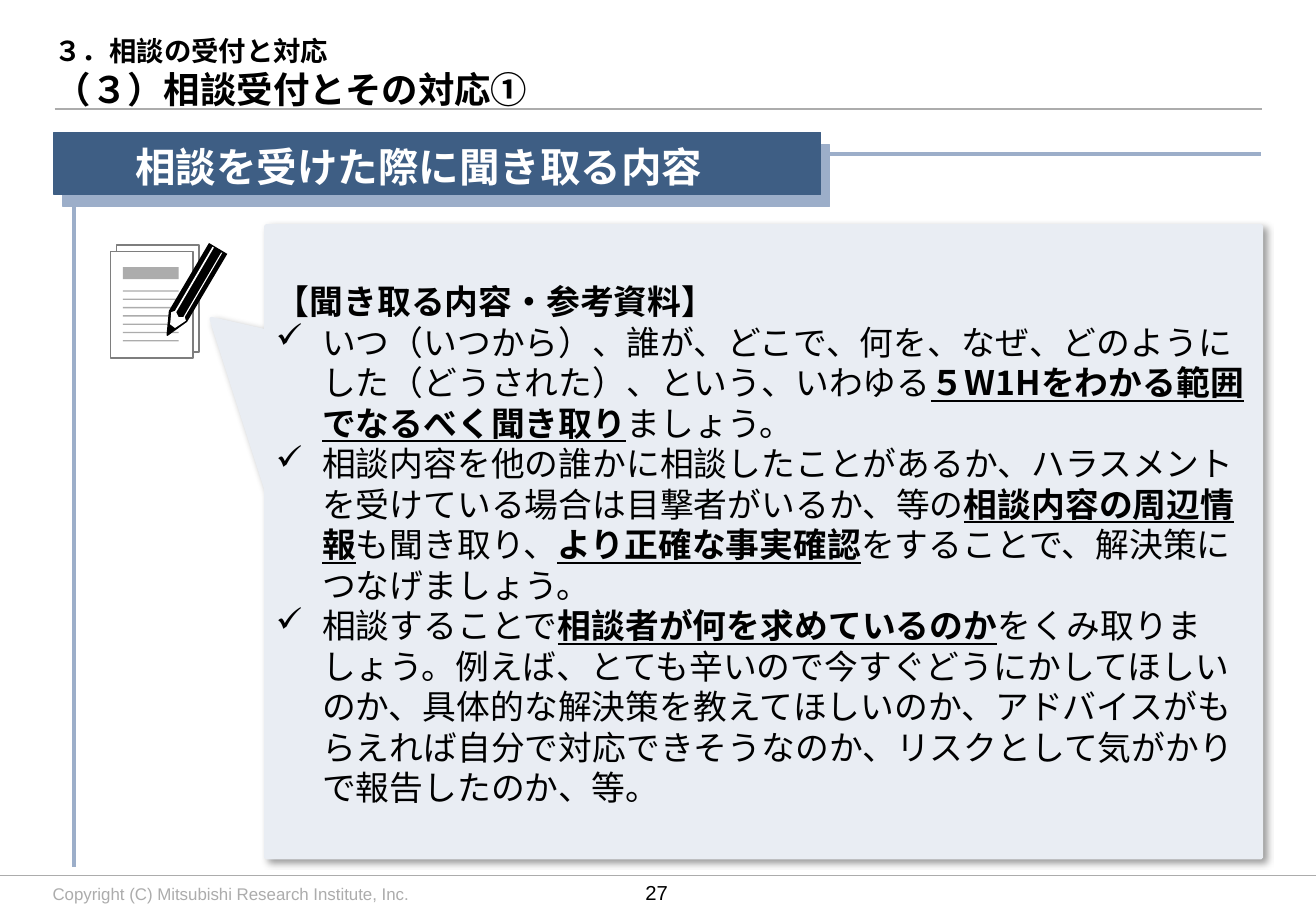
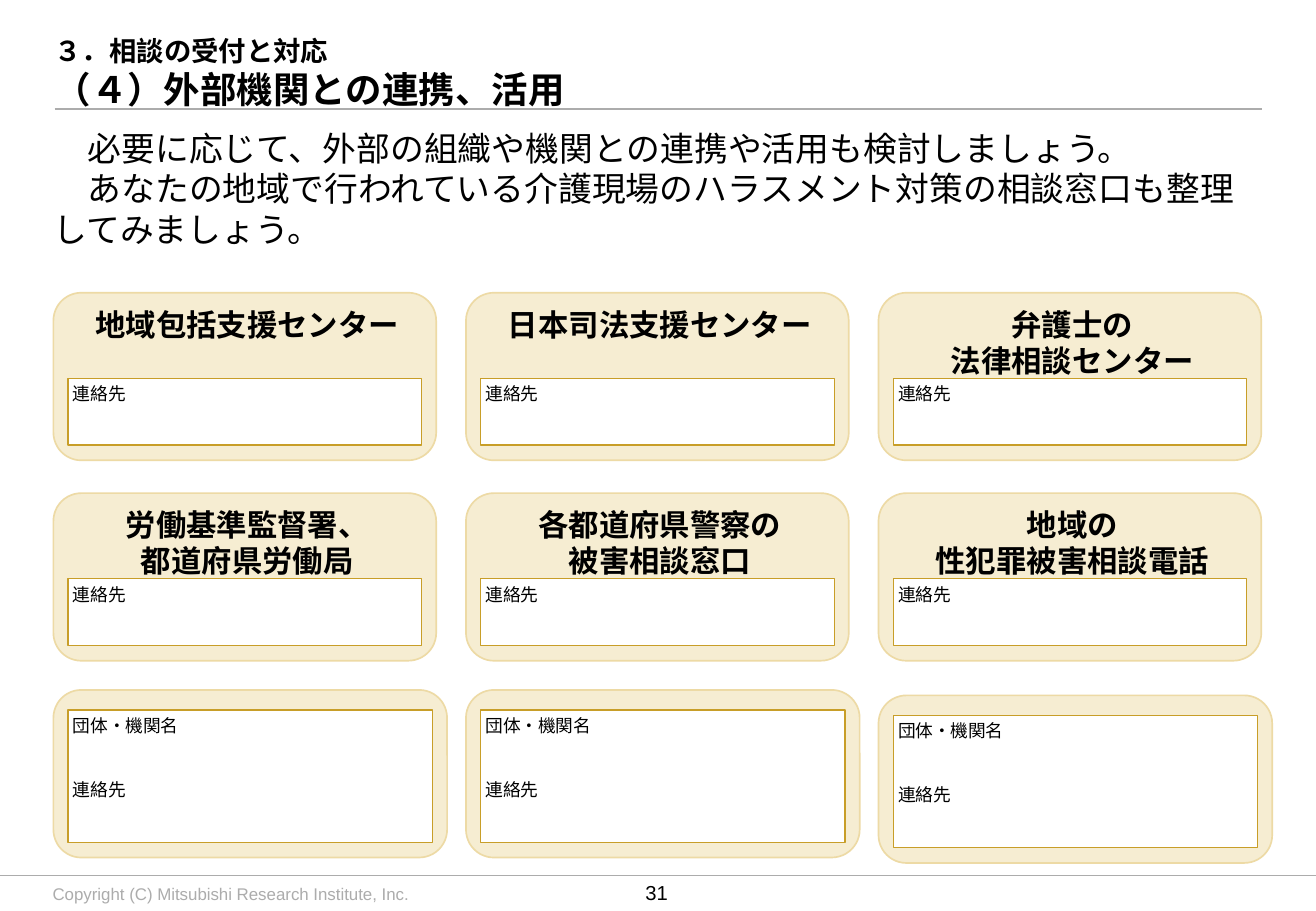
"""Build two slides on handling consultations and working with outside bodies."""
import dataclasses
import typing

import lxml.etree
import pptx
import pptx.dml.color
import pptx.enum.shapes
import pptx.enum.text
import pptx.oxml.ns
import pptx.util

SHAPES = pptx.enum.shapes.MSO_SHAPE
ALIGN = pptx.enum.text.PP_ALIGN
ANCHOR = pptx.enum.text.MSO_ANCHOR
SLIDE_WIDTH = pptx.util.Inches(10.83)
SLIDE_HEIGHT = pptx.util.Inches(7.5)


@dataclasses.dataclass(frozen=True)
class Theme:
    """Colours, fonts and type sizes of the deck."""
    ink: str = "000000"
    paper: str = "FFFFFF"
    grey: str = "ACACAC"
    sheet_edge: str = "7E7E7E"
    navy: str = "3E5E84"
    steel: str = "9CAEC9"
    mist: str = "E9EDF3"
    cream: str = "F6EDD2"
    cream_edge: str = "EDDAA5"
    gold: str = "C89E28"
    japanese: str = "Noto Sans CJK JP"
    latin: str = "Arial"
    banner: float = 24
    title: float = 21.6
    body: float = 20
    card: float = 18
    chapter: float = 16.2
    page: float = 12
    field: float = 10.5
    copyright: float = 10
    leading: float = 1.2


THEME = Theme()


class Box(typing.NamedTuple):
    """A frame in percent of the slide's width and height."""
    left: float
    top: float
    width: float
    height: float


class Span(typing.NamedTuple):
    """A stretch of text, plain or emphasised."""
    text: str
    key: bool = False


class Line(typing.NamedTuple):
    """A paragraph with its type style and indents in percent of the width."""
    spans: tuple[Span, ...]
    size: float
    bold: bool = False
    color: str = THEME.ink
    font: str = THEME.japanese
    align: ALIGN = ALIGN.LEFT
    margin: float = 0
    indent: float = 0
    bullet: str = ""
    before: float = 0


class Insets(typing.NamedTuple):
    """Inner margins in percent of the slide's width."""
    left: float = 0
    top: float = 0
    right: float = 0
    bottom: float = 0


PANEL_INSETS = Insets(0.74, 0.37, 0.74, 0)
CARD_INSETS = Insets(0.74, 0.37, 0.37, 0)
FIELD_INSETS = Insets(0.37, 0.37, 0, 0)
TITLE_BOX = Box(4.15, 3.87, 91.78, 8.13)
CARD_TOPS = (32.13, 54.13, 75.73)
CARD_LEFT, CARD_PITCH, CARD_HEIGHT = 4.06, 31.35, 18.4
CONTACT = "連絡先"
CARDS = (
    (("地域包括支援センター",), ("日本司法支援センター",), ("弁護士の", "法律相談センター")),
    (("労働基準監督署、", "都道府県労働局"), ("各都道府県警察の", "被害相談窓口"),
     ("地域の", "性犯罪被害相談電話")),
)
QUESTIONS = (
    (Span("いつ（いつから）、誰が、どこで、何を、なぜ、どのようにした（どうされた）、という、いわゆる"),
     Span("５W1Hをわかる範囲でなるべく聞き取り", True), Span("ましょう。")),
    (Span("相談内容を他の誰かに相談したことがあるか、ハラスメントを受けている場合は目撃者がいるか、等の"),
     Span("相談内容の周辺情報", True), Span("も聞き取り、"), Span("より正確な事実確認", True),
     Span("をすることで、解決策につなげましょう。")),
    (Span("相談することで"), Span("相談者が何を求めているのか", True),
     Span("をくみ取りましょう。例えば、とても辛いので今すぐどうにかしてほしいのか、"
          "具体的な解決策を教えてほしいのか、アドバイスがもらえれば自分で対応できそうなのか、"
          "リスクとして気がかりで報告したのか、等。")),
)
PENCIL = ((15.88, 26.67), (17.27, 27.87), (14.22, 35.33), (12.74, 36.87), (12.65, 36.8),
          (12.83, 34.13))
PENCIL_GLEAM = ((16.9, 27.73), (16.81, 27.73), (13.94, 34.8), (13.57, 34.8), (13.39, 34.27),
                (16.25, 27.2), (16.16, 27.07), (13.3, 34.13), (13.02, 34.27), (12.93, 35.6),
                (13.3, 36), (14.13, 35.2), (14.04, 34.8))


def across(share: float) -> int:
    """Turn a percentage of the slide's width into a length."""
    return round(SLIDE_WIDTH * share / 100)


def down(share: float) -> int:
    """Turn a percentage of the slide's height into a length."""
    return round(SLIDE_HEIGHT * share / 100)


def place(box: Box) -> tuple[int, int, int, int]:
    """Turn a box into left, top, width and height."""
    return across(box.left), down(box.top), across(box.width), down(box.height)


def rgb(color: str) -> pptx.dml.color.RGBColor:
    """Turn a hex code into a colour."""
    return pptx.dml.color.RGBColor.from_string(color)


def add_xml(parent, tag: str, **attributes: str):
    """Append a drawing element to a parent and return it."""
    return lxml.etree.SubElement(parent, pptx.oxml.ns.qn(tag), attributes)


def write(shape, lines: typing.Sequence[Line], insets: Insets = Insets(),
          anchor: ANCHOR = ANCHOR.MIDDLE) -> None:
    """Fill a shape with formatted paragraphs."""
    frame = shape.text_frame
    frame.word_wrap = True
    frame.auto_size = pptx.enum.text.MSO_AUTO_SIZE.NONE
    frame.vertical_anchor = anchor
    frame.margin_left, frame.margin_top, frame.margin_right, frame.margin_bottom = map(across, insets)
    for number, line in enumerate(lines):
        paragraph = frame.add_paragraph() if number else frame.paragraphs[0]
        properties = paragraph._p.get_or_add_pPr()
        properties.set("marL", str(across(line.margin)))
        properties.set("indent", str(across(line.indent)))
        if line.bullet:
            add_xml(properties, "a:buChar", char=line.bullet)
        paragraph.alignment = line.align
        paragraph.line_spacing = pptx.util.Pt(round(line.size * THEME.leading, 1))
        if line.before:
            paragraph.space_before = pptx.util.Pt(line.before)
        for span in line.spans:
            run = paragraph.add_run()
            run.text = span.text
            run.font.size = pptx.util.Pt(line.size)
            run.font.bold = line.bold or span.key
            run.font.underline = span.key
            run.font.color.rgb = rgb(line.color)
            run.font.name = line.font
            add_xml(run._r.get_or_add_rPr(), "a:ea", typeface=line.font)


def paint(shape, fill: str, edge: str = "", weight: float = 0.75):
    """Give a shape a flat fill and an optional outline."""
    shape.shadow.inherit = False
    shape.fill.solid()
    shape.fill.fore_color.rgb = rgb(fill)
    if edge:
        shape.line.color.rgb = rgb(edge)
        shape.line.width = pptx.util.Pt(weight)
    else:
        shape.line.fill.background()
    return shape


def add_block(slide, box: Box, fill: str, edge: str = "", weight: float = 0.75,
              outline: SHAPES = SHAPES.RECTANGLE):
    """Add a painted preset shape."""
    return paint(slide.shapes.add_shape(outline, *place(box)), fill, edge, weight)


def add_rule(slide, start: tuple[float, float], end: tuple[float, float], color: str,
             weight: float) -> None:
    """Add a straight line between two points."""
    rule = slide.shapes.add_connector(
        pptx.enum.shapes.MSO_CONNECTOR.STRAIGHT,
        across(start[0]), down(start[1]), across(end[0]), down(end[1]))
    rule.line.color.rgb = rgb(color)
    rule.line.width = pptx.util.Pt(weight)
    add_xml(rule.element.spPr, "a:effectLst")


def add_outline(slide, points: typing.Sequence[tuple[float, float]], fill: str) -> None:
    """Add a filled polygon."""
    corners = [(across(x), down(y)) for x, y in points]
    builder = slide.shapes.build_freeform(*corners[0])
    builder.add_line_segments(corners[1:], close=True)
    paint(builder.convert_to_shape(), fill)


def add_page(deck, heading: str, page: str):
    """Add a slide with the shared title, rules and footer."""
    slide = deck.slides.add_slide(deck.slide_layouts[5])
    title = slide.shapes.title
    title.left, title.top, title.width, title.height = place(TITLE_BOX)
    write(title, [Line((Span("３．相談の受付と対応"),), THEME.chapter, True),
                  Line((Span(heading),), THEME.title, True)], Insets(0, 0.46, 0.92, 0.46))
    add_rule(slide, (0, 96.13), (100, 96.13), THEME.grey, 0.75)
    add_rule(slide, (4.15, 12), (95.93, 12), THEME.grey, 1)
    credit = slide.shapes.add_textbox(*place(Box(4, 96.93, 46.17, 2.27)))
    write(credit, [Line((Span("Copyright (C) Mitsubishi Research Institute, Inc."),),
                        THEME.copyright, color=THEME.grey, font=THEME.latin)])
    number = slide.shapes.add_textbox(*place(Box(47.55, 96.13, 4.71, 3.73)))
    write(number, [Line((Span(page),), THEME.page, font=THEME.latin, align=ALIGN.CENTER)])
    return slide


def add_banner(slide, heading: str) -> None:
    """Draw the section banner with its offset bar and guide lines."""
    add_rule(slide, (5.63, 21.73), (5.63, 95.2), THEME.steel, 2.25)
    add_rule(slide, (36.93, 16.93), (95.84, 16.93), THEME.steel, 2.25)
    add_block(slide, Box(4.8, 15.87, 58.26, 6.8), THEME.steel, THEME.steel)
    banner = add_block(slide, Box(4.1, 14.53, 58.26, 6.8), THEME.navy, THEME.navy)
    write(banner, [Line((Span(heading),), THEME.banner, True, THEME.paper, margin=5.45)], CARD_INSETS)


def add_callout(slide) -> None:
    """Draw the callout listing what to ask."""
    callout = add_block(slide, Box(20.22, 24.8, 75.62, 69.33), THEME.mist, THEME.mist, 2.25,
                        SHAPES.RECTANGULAR_CALLOUT)
    callout.adjustments[0], callout.adjustments[1] = -0.555, -0.353
    effects = callout.element.spPr.find(pptx.oxml.ns.qn("a:effectLst"))
    shadow = add_xml(effects, "a:outerShdw", blurRad=str(pptx.util.Pt(4)), dist=str(pptx.util.Pt(3)),
                     dir="2700000", algn="tl", rotWithShape="0")
    add_xml(add_xml(shadow, "a:srgbClr", val=THEME.ink), "a:alpha", val="40000")
    questions = [Line(spans, THEME.body, margin=3.51, indent=-3.51, bullet="✓") for spans in QUESTIONS]
    write(callout, [Line((Span("【聞き取る内容・参考資料】"),), THEME.body, True), *questions], PANEL_INSETS)


def add_memo_icon(slide) -> None:
    """Draw two sheets of paper with a pencil."""
    for left, top in ((8.86, 26.93), (8.4, 27.6)):
        add_block(slide, Box(left, top, 6.28, 11.7), THEME.paper, THEME.sheet_edge, 1.1)
    add_block(slide, Box(9.33, 29.33, 4.25, 1.33), THEME.grey)
    for row in range(7):
        add_block(slide, Box(9.33, 31.87 + 0.91 * row, 4.25, 0.15), THEME.grey)
    add_outline(slide, PENCIL, THEME.ink)
    add_outline(slide, PENCIL_GLEAM, THEME.paper)


def add_card(slide, box: Box, names: typing.Sequence[str], field: Box,
             labels: typing.Sequence[str]) -> None:
    """Draw a card with its name and a white field to fill in."""
    card = add_block(slide, box, THEME.cream, THEME.cream_edge, 1, SHAPES.ROUNDED_RECTANGLE)
    if names:
        write(card, [Line((Span(name),), THEME.card, True, align=ALIGN.CENTER) for name in names],
              CARD_INSETS, ANCHOR.TOP)
    blank = add_block(slide, Box(box.left + field.left, box.top + field.top, field.width, field.height),
                      THEME.paper, THEME.gold)
    gap = 2 * THEME.field * THEME.leading
    write(blank, [Line((Span(label),), THEME.field, before=gap if row else 0)
                  for row, label in enumerate(labels)], FIELD_INSETS, ANCHOR.TOP)


def build_interview(deck) -> None:
    """Build the slide on what to ask."""
    slide = add_page(deck, "（３）相談受付とその対応①", "27")
    add_banner(slide, "相談を受けた際に聞き取る内容")
    add_callout(slide)
    add_memo_icon(slide)


def build_contacts(deck) -> None:
    """Build the slide with the grid of outside contacts."""
    slide = add_page(deck, "（４）外部機関との連携、活用", "31")
    lead = slide.shapes.add_textbox(*place(Box(4.06, 14, 91.78, 13.47)))
    sentences = ("必要に応じて、外部の組織や機関との連携や活用も検討しましょう。",
                 "あなたの地域で行われている介護現場のハラスメント対策の相談窓口も整理してみましょう。")
    write(lead, [Line((Span(sentence),), THEME.body, indent=2.6) for sentence in sentences],
          anchor=ANCHOR.TOP)
    lefts = [CARD_LEFT + CARD_PITCH * column for column in range(3)]
    for top, row in zip(CARD_TOPS, CARDS):
        for left, names in zip(lefts, row):
            add_card(slide, Box(left, top, 29.09, CARD_HEIGHT), names,
                     Box(1.11, 9.4, 26.87, 7.33), (CONTACT,))
    for left, drop in zip(lefts, (0, 0, 0.6)):
        add_card(slide, Box(left, CARD_TOPS[2] + drop, 29.92, CARD_HEIGHT), (),
                 Box(1.11, 2.2, 27.7, 14.53), ("団体・機関名", CONTACT))


def main() -> None:
    """Build and save the deck."""
    deck = pptx.Presentation()
    deck.slide_width, deck.slide_height = SLIDE_WIDTH, SLIDE_HEIGHT
    build_interview(deck)
    build_contacts(deck)
    deck.save("out.pptx")


if __name__ == "__main__":
    main()
